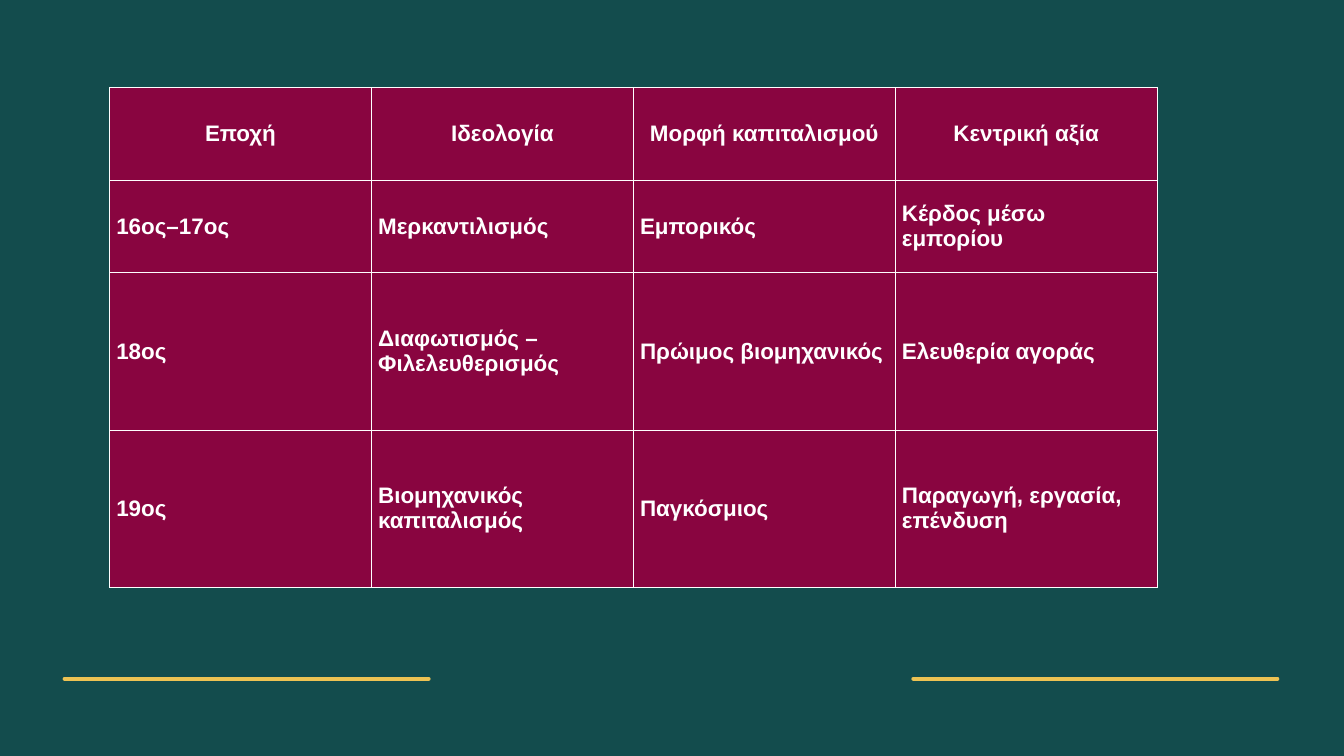
import lxml.etree
import pptx
import pptx.dml.color
import pptx.enum.shapes
import pptx.enum.text
import pptx.oxml.ns
import pptx.util

Inches = pptx.util.Inches
ROWS = [
    ["Εποχή", "Ιδεολογία", "Μορφή καπιταλισμού", "Κεντρική αξία"],
    ["16ος–17ος", "Μερκαντιλισμός", "Εμπορικός", "Κέρδος μέσω εμπορίου"],
    ["18ος", "Διαφωτισμός – Φιλελευθερισμός", "Πρώιμος βιομηχανικός",
     "Ελευθερία αγοράς"],
    ["19ος", "Βιομηχανικός καπιταλισμός", "Παγκόσμιος",
     "Παραγωγή, εργασία, επένδυση"],
]
HIGHS = [1.38, 1.38, 2.34, 2.34]


def paint(part, tint):
    """Give a fill one solid colour."""
    part.solid()
    part.fore_color.rgb = pptx.dml.color.RGBColor.from_string(tint)


def fill_cell(cell, text, align):
    paint(cell.fill, "890540")
    cell.vertical_anchor = pptx.enum.text.MSO_ANCHOR.MIDDLE
    para = cell.text_frame.paragraphs[0]
    para.alignment = align
    run = para.add_run()
    run.text = text
    run.font.name = "Arial"
    run.font.size = pptx.util.Pt(24)
    run.font.bold = True
    paint(run.font.fill, "FFFFFF")


def add_grid(slide, left, top, width, height):
    """Table of eras: centred heads, left-set body."""
    grid = slide.shapes.add_table(
        len(ROWS), len(ROWS[0]), Inches(left), Inches(top),
        Inches(width), Inches(height)).table
    for col in grid.columns:
        col.width = Inches(width / len(ROWS[0]))
    for i, (texts, high) in enumerate(zip(ROWS, HIGHS)):
        grid.rows[i].height = Inches(high)
        align = pptx.enum.text.PP_ALIGN.LEFT if i else pptx.enum.text.PP_ALIGN.CENTER
        for j, text in enumerate(texts):
            fill_cell(grid.cell(i, j), text, align)


def add_rules(slide, left, top, width, length):
    """Two gold rules, one at each end of the given width."""
    for start in (left, left + width - length):
        rule = slide.shapes.add_connector(
            pptx.enum.shapes.MSO_CONNECTOR.STRAIGHT, Inches(start),
            Inches(top), Inches(start + length), Inches(top))
        rule.line.width = pptx.util.Pt(4)
        paint(rule.line.fill, "EDC253")
        # Round ends, no shadow
        props = rule.element.spPr
        props.find(pptx.oxml.ns.qn("a:ln")).set("cap", "rnd")
        lxml.etree.SubElement(props, pptx.oxml.ns.qn("a:effectLst"))


def main():
    deck = pptx.Presentation()
    deck.slide_width = Inches(20)
    deck.slide_height = Inches(11.25)
    slide = deck.slides.add_slide(deck.slide_layouts[6])
    paint(slide.background.fill, "134C4D")
    add_rules(slide, 0.96, 10.1, 18.05, 5.42)
    add_grid(slide, 1.63, 1.3, 15.59, sum(HIGHS))
    deck.save("out.pptx")


if __name__ == "__main__":
    main()
